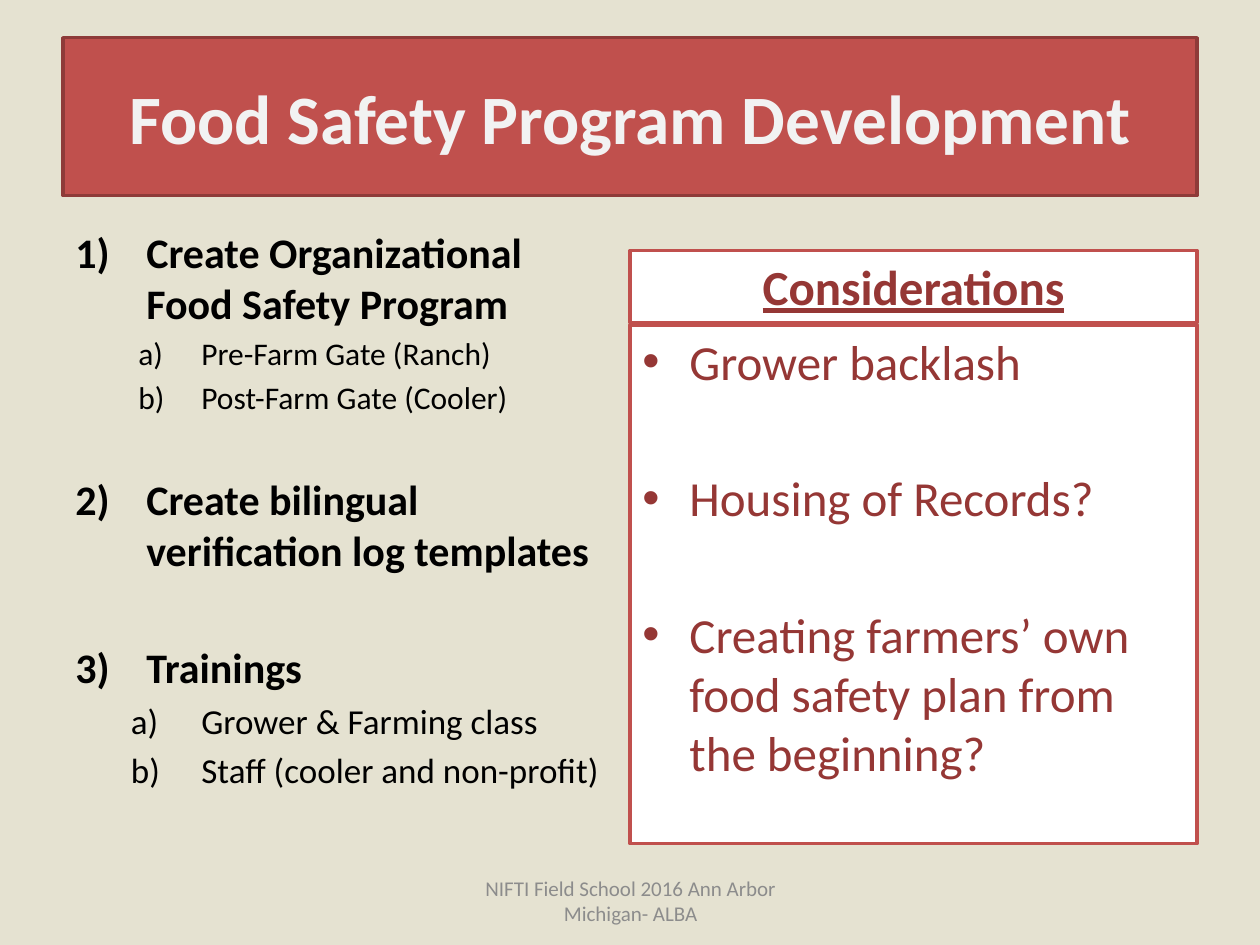
import pptx
import pptx.util
import pptx.dml.color
import pptx.enum.shapes
import pptx.enum.text
import pptx.oxml.ns
import lxml.etree

COLORS = {
    "background": "E5E2D1",
    "banner": "C0504D",
    "banner_edge": "8E3B39",
    "banner_text": "F2F2F2",
    "panel": "FFFFFF",
    "panel_text": "953735",
    "text": "000000",
    "footer": "8C8C8C",
}
STEPS = [
    ("Create Organizational Food Safety Program", 4.8, 18, 1.27,
     ["Pre-Farm Gate (Ranch)", "Post-Farm Gate (Cooler)"]),
    ("Create bilingual verification log templates", 33, 18, 1.27, []),
    ("Trainings", 38.5, 20, 1.42,
     ["Grower & Farming class", "Staff (cooler and non-profit)"]),
]
CONSIDERATIONS = [
    "Grower backlash",
    "Housing of Records?",
    "Creating farmers’ own food safety plan from the beginning?",
]


def rgb(name):
    return pptx.dml.color.RGBColor.from_string(COLORS[name])


class Deck:
    font = "Calibri"
    center = pptx.enum.text.PP_ALIGN.CENTER
    left = pptx.enum.text.PP_ALIGN.LEFT
    top = pptx.enum.text.MSO_ANCHOR.TOP
    middle = pptx.enum.text.MSO_ANCHOR.MIDDLE

    def __init__(self, presentation):
        self.slide = presentation.slides.add_slide(presentation.slide_layouts[5])
        fill = self.slide.background.fill
        fill.solid()
        fill.fore_color.rgb = rgb("background")

    def paint(self, shape, fill, line):
        shape.fill.solid()
        shape.fill.fore_color.rgb = rgb(fill)
        shape.line.color.rgb = rgb(line)
        shape.line.width = pptx.util.Pt(2)

    def frame(self, shape, anchor):
        text_frame = shape.text_frame
        text_frame.word_wrap = True
        text_frame.auto_size = pptx.enum.text.MSO_AUTO_SIZE.NONE
        text_frame.vertical_anchor = anchor
        return text_frame

    def paragraph(self, text_frame, text, size, color, align, bold=False, before=0, level=0):
        paragraph = text_frame.paragraphs[0]
        if paragraph.text:
            paragraph = text_frame.add_paragraph()
        paragraph.text = text
        paragraph.alignment = align
        paragraph.level = level
        paragraph.space_before = pptx.util.Pt(before)
        paragraph.font.name = self.font
        paragraph.font.size = pptx.util.Pt(size)
        paragraph.font.bold = bold
        paragraph.font.color.rgb = rgb(color)
        return paragraph

    def mark(self, paragraph, margin, hanging, tag, **attributes):
        properties = paragraph._p.get_or_add_pPr()
        properties.set("marL", str(pptx.util.Cm(margin)))
        properties.set("indent", str(-pptx.util.Cm(hanging)))
        mark = lxml.etree.SubElement(properties, pptx.oxml.ns.qn(tag), **attributes)
        default_font = properties.find(pptx.oxml.ns.qn("a:defRPr"))
        if default_font is not None:
            default_font.addprevious(mark)

    def title(self, text, *box):
        banner = self.slide.shapes.title
        banner.left, banner.top, banner.width, banner.height = map(pptx.util.Cm, box)
        self.paint(banner, "banner", "banner_edge")
        self.paragraph(self.frame(banner, self.middle), text, 39.6, "banner_text",
                       self.center, bold=True)

    def panel(self, anchor, *box):
        panel = self.slide.shapes.add_shape(
            pptx.enum.shapes.MSO_SHAPE.RECTANGLE, *map(pptx.util.Cm, box))
        panel.shadow.inherit = False
        self.paint(panel, "panel", "banner")
        return self.frame(panel, anchor)

    def text_box(self, anchor, *box):
        return self.frame(self.slide.shapes.add_textbox(*map(pptx.util.Cm, box)), anchor)

    def steps(self, steps, *box):
        outline = self.text_box(self.top, *box)
        for heading, before, size, hanging, details in steps:
            step = self.paragraph(outline, heading, 24, "text", self.left, True, before)
            self.mark(step, 1.43, 1.43, "a:buAutoNum", type="arabicParenR")
            for detail in details:
                item = self.paragraph(outline, detail, size, "text", self.left,
                                      before=size * 0.2, level=1)
                self.mark(item, 2.54, hanging, "a:buAutoNum", type="alphaLcParenR")

    def bullets(self, items, *box):
        panel = self.panel(self.top, *box)
        for index, text in enumerate(items):
            item = self.paragraph(panel, text, 28, "panel_text", self.left,
                                  before=44.5 if index else 5.6)
            self.mark(item, 0.95, 0.95, "a:buFont", typeface="Arial")
            self.mark(item, 0.95, 0.95, "a:buChar", char="•")

    def heading(self, text, *box):
        heading = self.paragraph(self.panel(self.top, *box), text, 28, "panel_text",
                                 self.center, bold=True)
        heading.font.underline = True

    def footer(self, text, *box):
        self.paragraph(self.text_box(self.middle, *box), text, 12, "footer", self.center)


def main():
    presentation = pptx.Presentation()
    presentation.slide_width = pptx.util.Cm(25.4)
    presentation.slide_height = pptx.util.Cm(19.05)
    deck = Deck(presentation)
    deck.title("Food Safety Program Development", 1.27, 0.76, 22.86, 3.18)
    deck.steps(STEPS, 1.27, 4.45, 11.23, 12.57)
    deck.bullets(CONSIDERATIONS, 12.7, 6.55, 11.43, 10.46)
    deck.footer("NIFTI Field School 2016 Ann Arbor Michigan- ALBA", 8.69, 17.65, 8.05, 1.02)
    deck.heading("Considerations", 12.7, 5.05, 11.43, 1.45)
    presentation.save("out.pptx")


if __name__ == "__main__":
    main()
